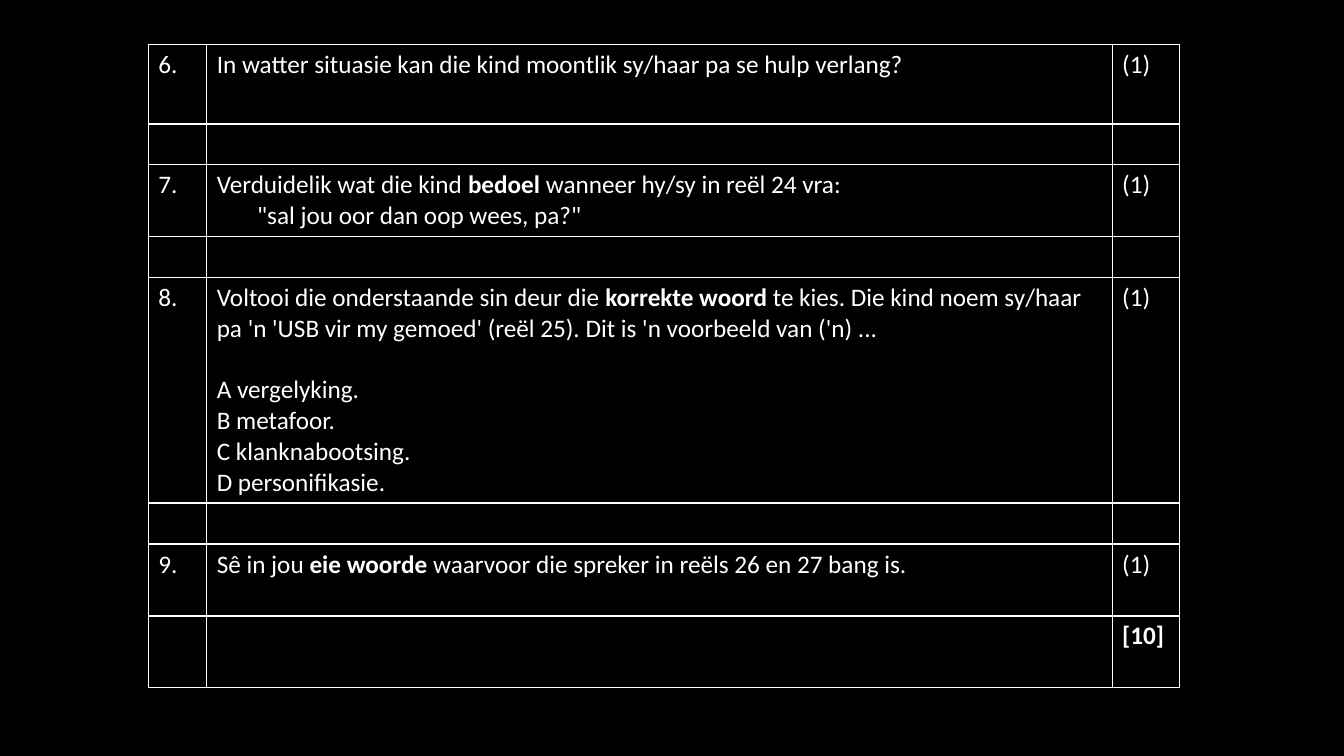
import dataclasses

import lxml.etree
import pptx
import pptx.dml.color
import pptx.oxml.ns
import pptx.util

WHITE = "FFFFFF"
BLACK = "000000"
SLIDE_WIDTH = pptx.util.Inches(13.33)
SLIDE_HEIGHT = pptx.util.Inches(7.5)
TABLE_LEFT = 11.03
TABLE_TOP = 5.87
COLUMN_WIDTHS = (4.35, 67.37, 5.03)
SPACER_HEIGHT = 5.4
TWO_LINE_HEIGHT = 9.52


@dataclasses.dataclass(frozen=True)
class Line:
    plain: str = ""
    bold: str = ""
    rest: str = ""
    indent: float = 0
    space_before: float = 0


@dataclasses.dataclass(frozen=True)
class Row:
    height: float
    number: str = ""
    question: tuple[Line, ...] = (Line(),)
    mark: Line = Line()


MARK = Line("(1)")
SPACER = Row(SPACER_HEIGHT)
ROWS = (
    Row(10.53, "6.", (
        Line("In watter situasie kan die kind moontlik sy/haar pa se hulp verlang?"),
    ), MARK),
    SPACER,
    Row(TWO_LINE_HEIGHT, "7.", (
        Line("Verduidelik wat die kind ", "bedoel ", "wanneer hy/sy in reël 24 vra:"),
        Line('"sal jou oor dan oop wees, pa?"', indent=0.4),
    ), MARK),
    SPACER,
    Row(29.8, "8.", (
        Line(
            "Voltooi die onderstaande sin deur die ",
            "korrekte woord ",
            "te kies. Die kind noem sy/haar pa 'n 'USB vir my gemoed' (reël 25). "
            "Dit is 'n voorbeeld van ('n) ...",
        ),
        Line("A vergelyking.", space_before=22),
        Line("B metafoor."),
        Line("C klanknabootsing."),
        Line("D personifikasie."),
    ), MARK),
    SPACER,
    Row(TWO_LINE_HEIGHT, "9.", (
        Line("Sê in jou ", "eie woorde ", "waarvoor die spreker in reëls 26 en 27 bang is."),
    ), MARK),
    Row(TWO_LINE_HEIGHT, mark=Line(bold="[10]")),
)


def color(value: str) -> pptx.dml.color.RGBColor:
    return pptx.dml.color.RGBColor.from_string(value)


def across(percent: float) -> int:
    return round(SLIDE_WIDTH * percent / 100)


def down(percent: float) -> int:
    return round(SLIDE_HEIGHT * percent / 100)


def add_borders(cell) -> None:
    properties = cell._tc.get_or_add_tcPr()
    for position, side in enumerate(("lnL", "lnR", "lnT", "lnB")):
        border = lxml.etree.Element(
            pptx.oxml.ns.qn(f"a:{side}"), w=str(pptx.util.Pt(1))
        )
        fill = lxml.etree.SubElement(border, pptx.oxml.ns.qn("a:solidFill"))
        lxml.etree.SubElement(fill, pptx.oxml.ns.qn("a:srgbClr"), val=WHITE)
        properties.insert(position, border)


def write_line(paragraph, line: Line) -> None:
    paragraph.font.name = "Calibri"
    paragraph.font.size = pptx.util.Pt(18)
    paragraph.font.color.rgb = color(WHITE)
    paragraph.space_before = pptx.util.Pt(line.space_before)
    if line.indent:
        paragraph._p.get_or_add_pPr().set("marL", str(pptx.util.Inches(line.indent)))
    for text, bold in ((line.plain, False), (line.bold, True), (line.rest, False)):
        if text:
            run = paragraph.add_run()
            run.text = text
            run.font.bold = bold


def fill_cell(cell, lines: tuple[Line, ...]) -> None:
    cell.fill.background()
    add_borders(cell)
    frame = cell.text_frame
    for index, line in enumerate(lines):
        paragraph = frame.add_paragraph() if index else frame.paragraphs[0]
        write_line(paragraph, line)


def add_question_table(slide) -> None:
    table = slide.shapes.add_table(
        len(ROWS),
        len(COLUMN_WIDTHS),
        across(TABLE_LEFT),
        down(TABLE_TOP),
        across(sum(COLUMN_WIDTHS)),
        down(sum(row.height for row in ROWS)),
    ).table
    table.first_row = False
    table.horz_banding = False
    for column, width in zip(table.columns, COLUMN_WIDTHS):
        column.width = across(width)
    for table_row, row in zip(table.rows, ROWS):
        table_row.height = down(row.height)
        contents = ((Line(row.number),), row.question, (row.mark,))
        for cell, lines in zip(table_row.cells, contents):
            fill_cell(cell, lines)


def main() -> None:
    presentation = pptx.Presentation()
    presentation.slide_width = SLIDE_WIDTH
    presentation.slide_height = SLIDE_HEIGHT
    slide = presentation.slides.add_slide(presentation.slide_layouts[6])
    slide.background.fill.solid()
    slide.background.fill.fore_color.rgb = color(BLACK)
    add_question_table(slide)
    presentation.save("out.pptx")


if __name__ == "__main__":
    main()
